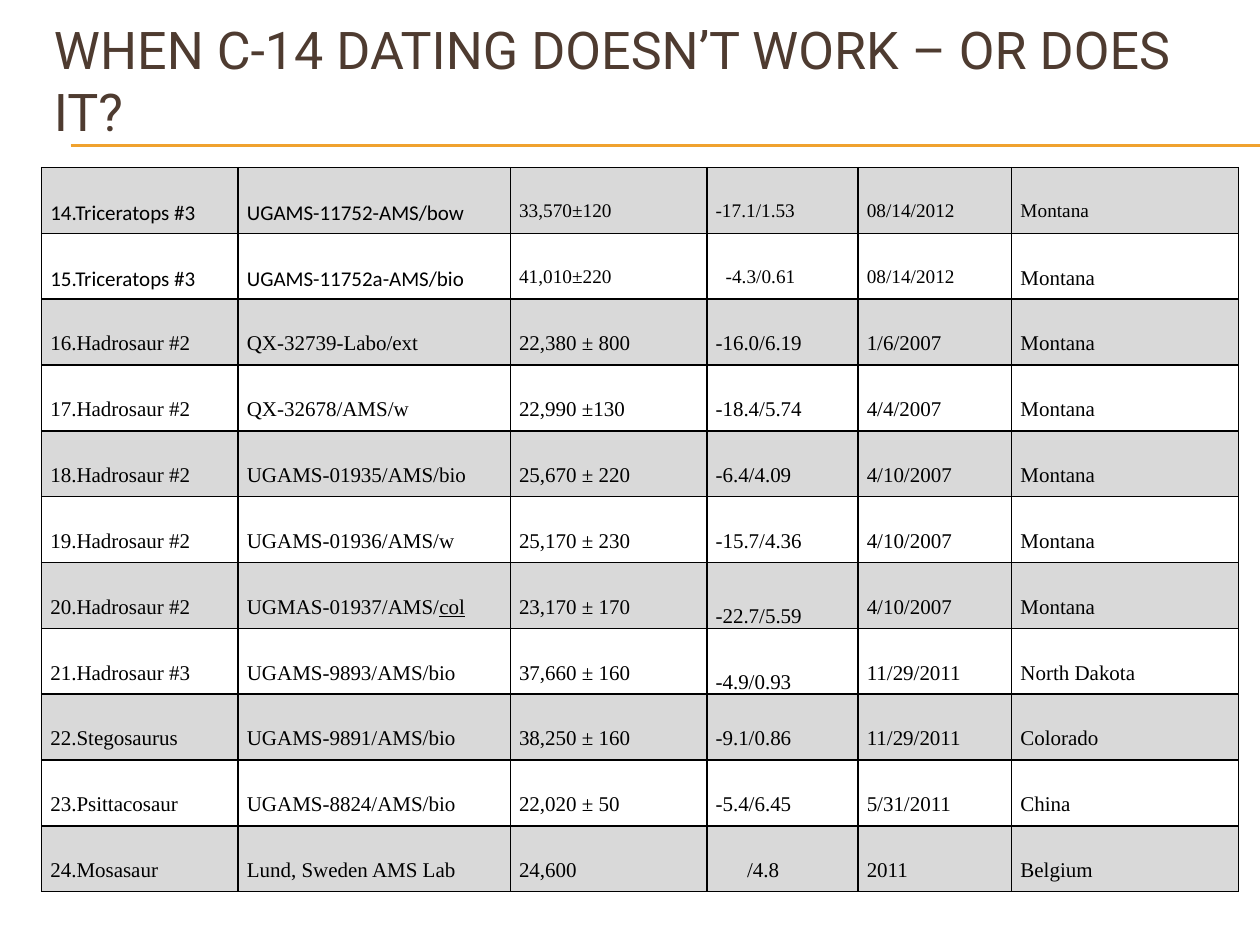
from dataclasses import astuple, dataclass

from lxml import etree
from pptx import Presentation
from pptx import util as u
from pptx.dml.color import RGBColor
from pptx.enum import shapes, text
from pptx.oxml import ns

COLORS = {"title": "4E3B30", "rule": "F0A22E", "ink": "000000",
          "band": "D9D9D9", "plain": "FFFFFF"}
SERIF = "Times New Roman"
COLUMN_WIDTHS = [1.56, 2.16, 1.56, 1.2, 1.22, 1.8]
TABLE_HEIGHT = 5.75
CELL_INSET = 0.07
SMALL_CELLS = {(0, 2), (0, 3), (0, 4), (0, 5), (1, 2), (1, 3), (1, 4)}
CALIBRI_CELLS = {(0, 0), (0, 1), (1, 0), (1, 1)}
BOTTOM_CELLS = {(6, 3), (7, 3)}
INDENTS = {(1, 3): 0.08, (10, 3): 0.25}
UNDERLINED = "col"


@dataclass
class Sample:
    fossil: str
    lab_code: str
    age: str
    ratio: str
    date: str
    place: str


SAMPLES = [
    Sample("14.Triceratops #3", "UGAMS-11752-AMS/bow", "33,570±120", "-17.1/1.53", "08/14/2012", "Montana"),
    Sample("15.Triceratops #3", "UGAMS-11752a-AMS/bio", "41,010±220", "-4.3/0.61", "08/14/2012", "Montana"),
    Sample("16.Hadrosaur #2", "QX-32739-Labo/ext", "22,380 ± 800", "-16.0/6.19", "1/6/2007", "Montana"),
    Sample("17.Hadrosaur #2", "QX-32678/AMS/w", "22,990 ±130", "-18.4/5.74", "4/4/2007", "Montana"),
    Sample("18.Hadrosaur #2", "UGAMS-01935/AMS/bio", "25,670 ± 220", "-6.4/4.09", "4/10/2007", "Montana"),
    Sample("19.Hadrosaur #2", "UGAMS-01936/AMS/w", "25,170 ± 230", "-15.7/4.36", "4/10/2007", "Montana"),
    Sample("20.Hadrosaur #2", "UGMAS-01937/AMS/col", "23,170 ± 170", "-22.7/5.59", "4/10/2007", "Montana"),
    Sample("21.Hadrosaur #3", "UGAMS-9893/AMS/bio", "37,660 ± 160", "-4.9/0.93", "11/29/2011", "North Dakota"),
    Sample("22.Stegosaurus", "UGAMS-9891/AMS/bio", "38,250 ± 160", "-9.1/0.86", "11/29/2011", "Colorado"),
    Sample("23.Psittacosaur", "UGAMS-8824/AMS/bio", "22,020 ± 50", "-5.4/6.45", "5/31/2011", "China"),
    Sample("24.Mosasaur", "Lund, Sweden AMS Lab", "24,600", "/4.8", "2011", "Belgium"),
]


def rgb(name: str) -> RGBColor:
    return RGBColor.from_string(COLORS[name])


def add_text(p, content: str, *, size: float = 12, font: str = SERIF,
             color: str = "ink", underline: bool = False) -> None:
    r = p.add_run()
    r.text = content
    r.font.size = u.Pt(size)
    r.font.name = font
    r.font.color.rgb = rgb(color)
    if underline:
        r.font.underline = True


def add_rule(s, y: float) -> None:
    line = s.shapes.add_connector(shapes.MSO_CONNECTOR.STRAIGHT,
                                  u.Inches(0.56), u.Inches(y), u.Inches(10), u.Inches(y))
    line.line.color.rgb = rgb("rule")
    line.line.width = u.Pt(0.75)
    etree.SubElement(line._element.spPr, ns.qn("a:effectLst"))


def add_borders(cell) -> None:
    tc_pr = cell._tc.get_or_add_tcPr()
    for side in ("lnL", "lnR", "lnT", "lnB"):
        ln = etree.SubElement(tc_pr, ns.qn(f"a:{side}"), w=str(u.Pt(1)))
        fill = etree.SubElement(ln, ns.qn("a:solidFill"))
        etree.SubElement(fill, ns.qn("a:srgbClr"), val=COLORS["ink"])


def fill_cell(cell, content: str, spot: tuple[int, int]) -> None:
    add_borders(cell)
    cell.fill.solid()
    cell.fill.fore_color.rgb = rgb("plain" if spot[0] % 2 else "band")
    cell.margin_left = u.Inches(CELL_INSET + INDENTS.get(spot, 0))
    cell.margin_right = u.Inches(CELL_INSET)
    cell.margin_top = cell.margin_bottom = u.Inches(0)
    at_bottom = spot in BOTTOM_CELLS
    cell.vertical_anchor = text.MSO_ANCHOR.BOTTOM if at_bottom else text.MSO_ANCHOR.MIDDLE
    p = cell.text_frame.paragraphs[0]
    p.alignment = text.PP_ALIGN.LEFT if at_bottom else text.PP_ALIGN.JUSTIFY
    p.line_spacing = 2.0
    size = 11 if spot in SMALL_CELLS else 12
    font = "Calibri" if spot in CALIBRI_CELLS else SERIF
    plain = content.removesuffix(UNDERLINED)
    add_text(p, plain, size=size, font=font)
    if plain != content:
        add_text(p, UNDERLINED, size=size, font=font, underline=True)


def add_samples(s, samples: list[Sample]) -> None:
    frame = s.shapes.add_table(len(samples), len(COLUMN_WIDTHS), u.Inches(0.33), u.Inches(1.33),
                               u.Inches(sum(COLUMN_WIDTHS)), u.Inches(TABLE_HEIGHT))
    table = frame.table
    for column, width in zip(table.columns, COLUMN_WIDTHS):
        column.width = u.Inches(width)
    for i, sample in enumerate(samples):
        table.rows[i].height = u.Inches(TABLE_HEIGHT / len(samples))
        for j, content in enumerate(astuple(sample)):
            fill_cell(table.cell(i, j), content, (i, j))


def add_title(s, content: str) -> None:
    sp = s.shapes.add_textbox(u.Inches(0.33), u.Inches(0.17), u.Inches(9.5), u.Inches(0.92))
    tf = sp.text_frame
    tf.word_wrap = True
    tf.vertical_anchor = text.MSO_ANCHOR.MIDDLE
    add_text(tf.paragraphs[0], content, size=29.7, font="Roboto", color="title")


def main() -> None:
    prs = Presentation()
    prs.slide_width, prs.slide_height = u.Inches(10), u.Inches(7.5)
    s = prs.slides.add_slide(prs.slide_layouts[6])
    for y in (1.15, 1.16):
        add_rule(s, y)
    add_samples(s, SAMPLES)
    add_title(s, "WHEN C-14 DATING DOESN’T WORK – OR DOES IT?")
    prs.save("out.pptx")


if __name__ == "__main__":
    main()
